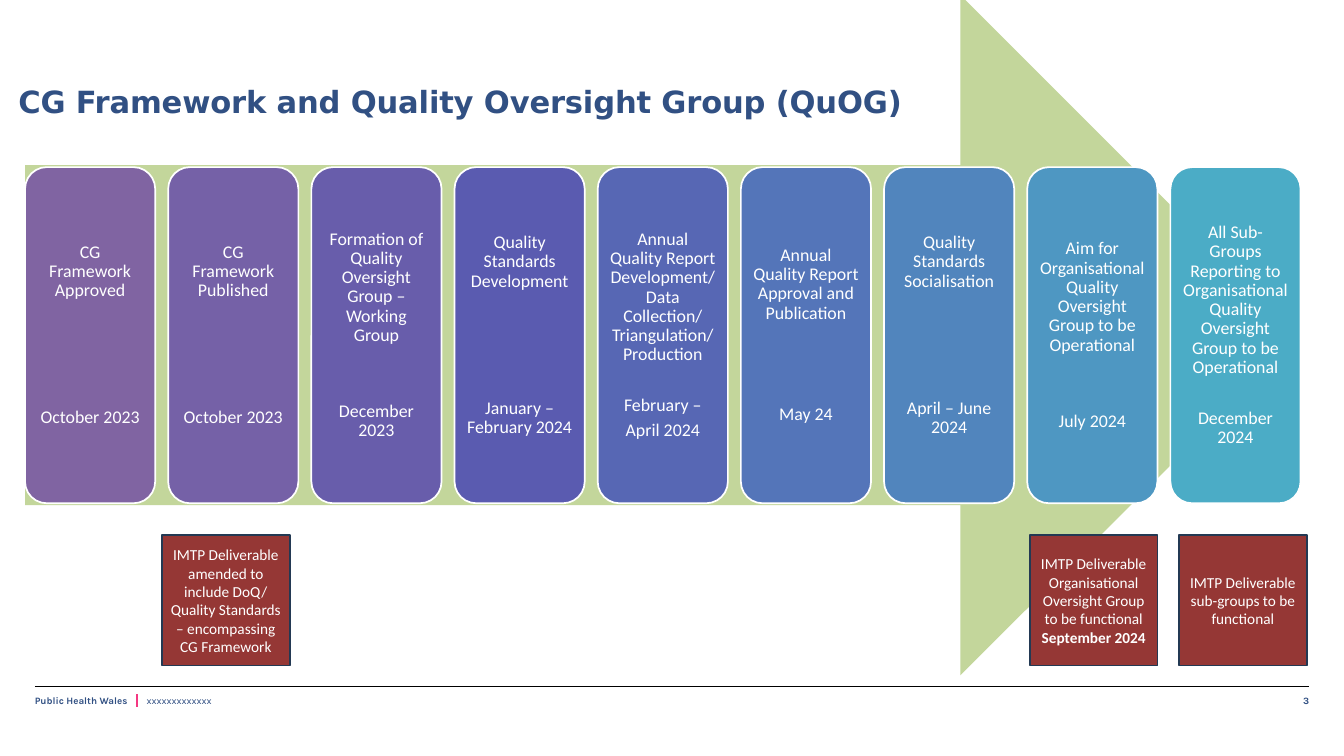
from lxml.etree import SubElement
from pptx import Presentation
from pptx.dml.color import RGBColor
from pptx.enum.shapes import MSO_CONNECTOR as Connector, MSO_SHAPE as Shape
from pptx.enum.text import MSO_ANCHOR as Anchor, MSO_AUTO_SIZE as AutoSize, PP_ALIGN as Align
from pptx.oxml.ns import qn
from pptx.util import Inches, Pt

NAVY = "315083"
WHITE = "FFFFFF"
FOOTER = {"name": "Karla", "size": Pt(11.5)}
TITLE = {"name": "DejaVu Sans", "size": Pt(36), "bold": True}
STAGE = {"name": "Calibri", "size": Pt(21)}
DELIVERABLE = {"name": "Calibri", "size": Pt(18)}
STAGE_SPACING = {"line_spacing": 0.9, "space_after": Pt(7)}
BLANK_LINE = 30

STAGES = [
    ("8064A2", "CG Framework Approved", 4, ["October 2023"]),
    ("7561A7", "CG Framework Published", 4, ["October 2023"]),
    ("685DAB", "Formation of Quality Oversight Group – Working Group", 2, ["December 2023"]),
    ("5A5BB0", "Quality Standards Development", 4, ["January – February 2024"]),
    ("5767B4", "Annual Quality Report Development/ Data Collection/ Triangulation/ Production",
     1, ["February –", "April 2024"]),
    ("5475B9", "Annual Quality Report Approval and Publication", 3, ["May 24"]),
    ("5185BD", "Quality Standards Socialisation", 4, ["April – June 2024"]),
    ("4E97C2", "Aim for Organisational Quality Oversight Group to be Operational",
     2, ["July 2024"]),
    ("4BACC6", "All Sub-Groups Reporting to Organisational Quality Oversight Group to be Operational",
     1, ["December 2024"]),
]
DELIVERABLES = [
    (2.65, "IMTP Deliverable amended to include DoQ/ Quality Standards – encompassing CG Framework", ""),
    (16.85, "IMTP Deliverable Organisational Oversight Group to be functional ", "September 2024"),
    (19.29, "IMTP Deliverable sub-groups to be functional", ""),
]


def colour(value):
    return RGBColor.from_string(value)


def apply(target, values):
    for name, value in values.items():
        setattr(target, name, value)


def write(para, text, style, ink, **extra):
    span = para.add_run()
    span.text = text
    apply(span.font, {**style, **extra})
    span.font.color.rgb = colour(ink)
    return span


def set_frame(frame, anchor, inset_x, inset_y):
    apply(frame, {
        "word_wrap": True, "auto_size": AutoSize.NONE, "vertical_anchor": anchor,
        "margin_left": Inches(inset_x), "margin_right": Inches(inset_x),
        "margin_top": Inches(inset_y), "margin_bottom": Inches(inset_y),
    })


def add_panel(page, kind, box, fill, edge=None):
    panel = page.shapes.add_shape(kind, *map(Inches, box))
    panel.shadow.inherit = False
    panel.fill.solid()
    panel.fill.fore_color.rgb = colour(fill)
    if edge:
        panel.line.color.rgb = colour(edge)
        panel.line.width = Pt(2)
    else:
        panel.line.fill.background()
    return panel


def add_rule(page, start, end, ink, weight):
    rule = page.shapes.add_connector(Connector.STRAIGHT, *map(Inches, start + end))
    rule.line.color.rgb = colour(ink)
    rule.line.width = Pt(weight)
    SubElement(rule._element.spPr, qn("a:effectLst"))


def add_footer(page, box):
    left, top, width, height = box
    add_rule(page, (left, top), (left + width, top), "000000", 0.41)
    text_top = top + 0.14
    add_rule(page, (left + 1.67, text_top), (left + 1.67, top + height), "F43882", 1.65)
    labels = [(0, 1.6, "Public Health Wales", True),
              (1.83, 1.3, "xxxxxxxxxxxxx", False),
              (20.75, 0.19, "3", True)]
    for offset, label_width, text, bold in labels:
        label = page.shapes.add_textbox(*map(Inches, (left + offset, text_top, label_width, 0.21)))
        set_frame(label.text_frame, Anchor.TOP, 0, 0)
        write(label.text_frame.paragraphs[0], text, FOOTER, NAVY, bold=bold)


def add_title(page, box):
    title = page.shapes.title
    apply(title, dict(zip(("left", "top", "width", "height"), map(Inches, box))))
    set_frame(title.text_frame, Anchor.TOP, 0, 0.02)
    para = title.text_frame.paragraphs[0]
    para.alignment = Align.LEFT
    span = write(para, "CG Framework and Quality Oversight Group (QuOG)", TITLE, NAVY)
    span._r.get_or_add_rPr().set("spc", "-20")


def add_stage(page, box, fill, task, blanks, dates):
    card = add_panel(page, Shape.ROUNDED_RECTANGLE, box, fill, WHITE)
    frame = card.text_frame
    set_frame(frame, Anchor.MIDDLE, 0.09, 0.09)
    for index, text in enumerate([task] + dates):
        para = frame.add_paragraph() if index else frame.paragraphs[0]
        apply(para, {"alignment": Align.CENTER, **STAGE_SPACING})
        if index == 1:
            para.space_before = Pt(BLANK_LINE * blanks)
        write(para, text, STAGE, WHITE)


def add_timeline(page, box):
    left, top, width, height = box
    add_panel(page, Shape.RIGHT_ARROW, box, "C3D69B")
    card_width, card_height = 2.13, 5.5
    step = (width - card_width) / (len(STAGES) - 1)
    card_top = top + (height - card_height) / 2
    for index, stage in enumerate(STAGES):
        add_stage(page, (left + index * step, card_top, card_width, card_height), *stage)


def add_deliverables(page, top, width, height):
    for left, text, deadline in DELIVERABLES:
        box = add_panel(page, Shape.RECTANGLE, (left, top, width, height), "953735", "233953")
        set_frame(box.text_frame, Anchor.MIDDLE, 0.1, 0.05)
        para = box.text_frame.paragraphs[0]
        para.alignment = Align.CENTER
        write(para, text, DELIVERABLE, WHITE)
        if deadline:
            write(para, deadline, DELIVERABLE, WHITE, bold=True)


def main():
    deck = Presentation()
    deck.slide_width, deck.slide_height = Inches(21.99), Inches(12.37)
    page = deck.slides.add_slide(deck.slide_layouts[5])
    add_footer(page, (0.57, 11.22, 20.84, 0.35))
    add_title(page, (0.3, 1.33, 14.97, 0.62))
    add_timeline(page, (0.41, -0.08, 20.87, 11.13))
    add_deliverables(page, 8.76, 2.09, 2.13)
    deck.save("out.pptx")


if __name__ == "__main__":
    main()
